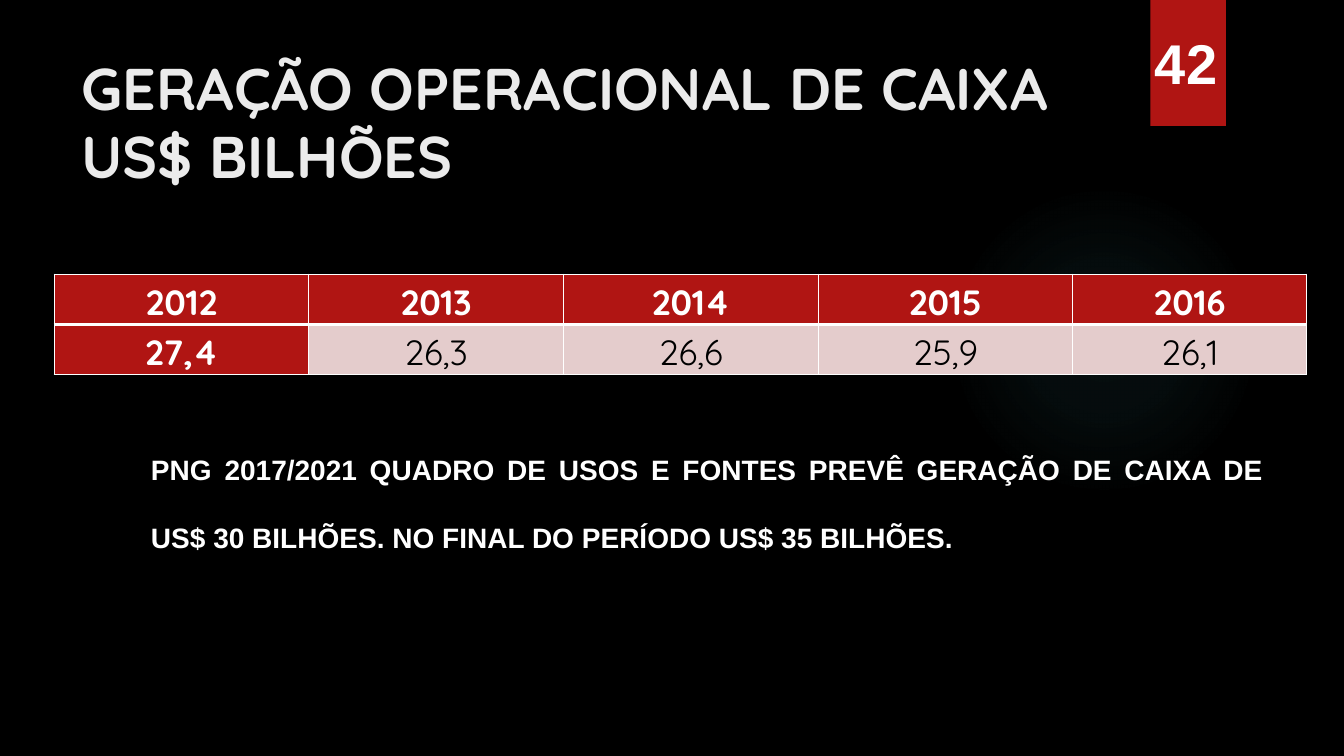
from pptx import Presentation, oxml, util as u
from pptx.dml.color import RGBColor
from pptx.enum import shapes, text
from pptx.oxml import ns

Pt = u.Pt
C = {"black": "000000", "white": "FFFFFF", "title": "EBEBEB",
     "red": "B01513", "pink": "E4CCCC", "glow": "50B9C1"}


def set_font(p, name, size, color, bold=True):
    p.font.name, p.font.size, p.font.bold = name, Pt(size), bold
    p.font.color.rgb = RGBColor.from_string(C[color])


def set_border(cell, side, width):
    cell._tc.get_or_add_tcPr().append(oxml.parse_xml(
        f'<a:{side} {ns.nsdecls("a")} w="{Pt(width)}"><a:solidFill>'
        f'<a:srgbClr val="{C["white"]}"/></a:solidFill></a:{side}>'))


prs = Presentation()
prs.slide_width, prs.slide_height = Pt(960), Pt(540)
s = prs.slides.add_slide(prs.slide_layouts[5])
s.background.fill.solid()
s.background.fill.fore_color.rgb = RGBColor.from_string(C["black"])

# Soft glow
sp = s.shapes.add_shape(shapes.MSO_SHAPE.OVAL, Pt(677.5), Pt(131.8), Pt(221.8), Pt(221.8))
sp.shadow.inherit = False
sp.line.fill.background()
sp.fill.solid()
stops = "".join(
    f'<a:gs pos="{pos * 1000}"><a:srgbClr val="{C["glow"]}">'
    f'<a:alpha val="{alpha * 1000}"/></a:srgbClr></a:gs>'
    for pos, alpha in [(0, 7), (36, 6), (69, 0)])
spPr = sp._element.spPr
spPr.replace(spPr.find(ns.qn("a:solidFill")), oxml.parse_xml(
    f'<a:gradFill {ns.nsdecls("a")}><a:gsLst>{stops}</a:gsLst><a:path path="circle">'
    '<a:fillToRect l="50000" t="50000" r="50000" b="50000"/></a:path></a:gradFill>'))

# Page number tab
sp = s.shapes.add_shape(shapes.MSO_SHAPE.RECTANGLE, Pt(821.7), 0, Pt(54), Pt(90))
sp.shadow.inherit = False
sp.line.fill.background()
sp.fill.solid()
sp.fill.fore_color.rgb = RGBColor.from_string(C["red"])

# Title
title = s.shapes.title
title.left, title.top, title.width, title.height = Pt(51.1), Pt(36), Pt(751), Pt(110.2)
tf = title.text_frame
tf.word_wrap = True
tf.auto_size = text.MSO_AUTO_SIZE.NONE
tf.vertical_anchor = text.MSO_ANCHOR.TOP
p = tf.paragraphs[0]
p.text = "GERAÇÃO OPERACIONAL DE CAIXA\vUS$ BILHÕES"
p.alignment = text.PP_ALIGN.LEFT
p.line_spacing = 0.97
set_font(p, "Quicksand", 42, "title")

# Cash generation by year
rows = [["2012", "2013", "2014", "2015", "2016"],
        ["27,4", "26,3", "26,6", "25,9", "26,1"]]
widths = [181.9] * 4 + [167]
table = s.shapes.add_table(2, 5, Pt(38.7), Pt(195.8), Pt(sum(widths)), Pt(69.2)).table
for column, width in zip(table.columns, widths):
    column.width = Pt(width)
for i, row in enumerate(rows):
    for j, value in enumerate(row):
        cell = table.cell(i, j)
        strong = i == 0 or j == 0
        cell.margin_left = cell.margin_right = Pt(9.4)
        cell.margin_top = cell.margin_bottom = 0
        for side in ("lnL", "lnR", "lnT", "lnB"):
            divider = (i, side) in [(0, "lnB"), (1, "lnT")]
            set_border(cell, side, 3 if divider else 1)
        cell.fill.solid()
        cell.fill.fore_color.rgb = RGBColor.from_string(C["red" if strong else "pink"])
        p = cell.text_frame.paragraphs[0]
        p.text = value
        p.alignment = text.PP_ALIGN.CENTER
        p.line_spacing = 1.15
        set_font(p, "Quicksand", 25, "white" if strong else "black", strong)

# Forecast note and page number
notes = [
    ("PNG 2017/2021 QUADRO DE USOS E FONTES PREVÊ GERAÇÃO DE CAIXA DE "
     "US$ 30 BILHÕES. NO FINAL DO PERÍODO US$ 35 BILHÕES.",
     (100.8, 295.9, 808.6, 104.4), 20, text.PP_ALIGN.JUSTIFY, 2, 10),
    ("42", (817.9, 16.6, 61.2, 55.4), 40, text.PP_ALIGN.LEFT, 1, 0),
]
for words, box, size, align, spacing, after in notes:
    tf = s.shapes.add_textbox(*map(Pt, box)).text_frame
    tf.word_wrap = True
    p = tf.paragraphs[0]
    p.text = words
    p.alignment, p.line_spacing, p.space_after = align, spacing, Pt(after)
    set_font(p, "Arial", size, "white")

prs.save("out.pptx")
